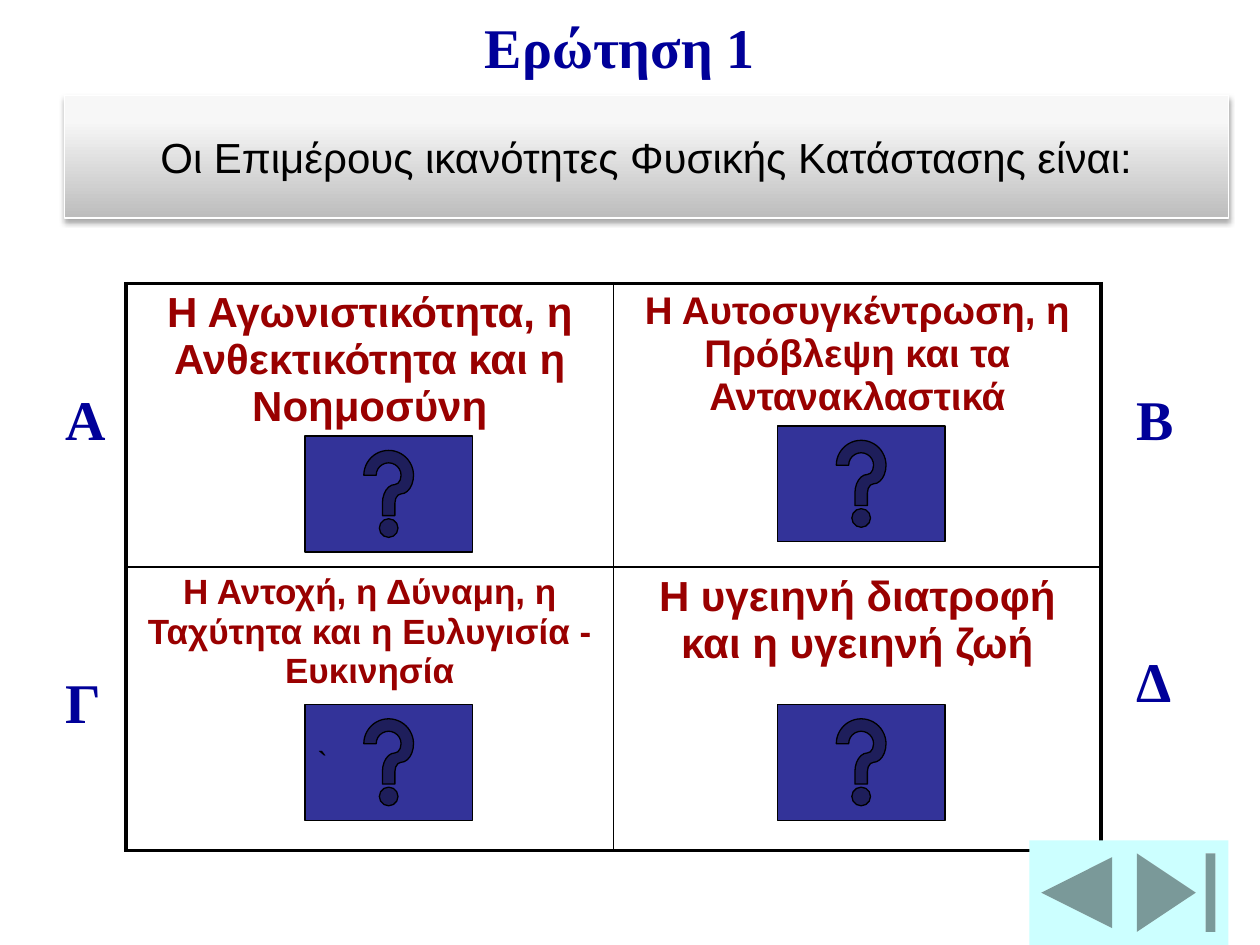
from lxml import etree
from pptx import Presentation
from pptx.dml.color import RGBColor
from pptx.enum.shapes import MSO_SHAPE
from pptx.enum.text import MSO_ANCHOR, PP_ALIGN
from pptx.oxml import parse_xml
from pptx.oxml.ns import qn
from pptx.util import Inches, Pt

NAMESPACE = "http://schemas.openxmlformats.org/drawingml/2006/main"
COLORS = {
    "heading": "000099", "answer": "990000", "ink": "000000", "paper": "FFFFFF",
    "button": "333399", "navigation": "CCFFFF",
    "banner_top": "F7F7F7", "banner_bottom": "BDBDBD",
}

# Content
HEADING = "Ερώτηση 1"
QUESTION = "Οι Επιμέρους ικανότητες Φυσικής Κατάστασης είναι:"
ANSWERS = [
    [("Η Αγωνιστικότητα, η Ανθεκτικότητα και η Νοημοσύνη", 24),
     ("Η Αυτοσυγκέντρωση, η Πρόβλεψη και τα Αντανακλαστικά", 22)],
    [("Η Αντοχή, η Δύναμη, η Ταχύτητα και η Ευλυγισία - Ευκινησία", 20),
     ("Η υγειηνή διατροφή και η υγειηνή ζωή", 24)],
]
LETTERS = [["Α", "Β"], ["Γ", "Δ"]]
BUTTON_TEXTS = [["", ""], ["`", ""]]

# Grid
TABLE_LEFT, TABLE_TOP, COLUMN, ROW = 1, 2.25, 3.87, 2.25
LETTER_LEFTS = [0.42, 8.92]
LETTER_TOPS = [[3, 3], [5.25, 5.08]]
BUTTON_LEFTS = [2.42, 6.17]
BUTTON_TOPS = [[3.46, 3.38], [5.59, 5.59]]
NAVIGATION = [(MSO_SHAPE.ACTION_BUTTON_END, 8.92, 0.83),
              (MSO_SHAPE.ACTION_BUTTON_BACK_OR_PREVIOUS, 8.17, 0.75)]


def color(name):
    return RGBColor.from_string(COLORS[name])


def write(frame, text, size, font, color_name, bold=False, align=PP_ALIGN.LEFT):
    frame.text = text
    paragraph = frame.paragraphs[0]
    paragraph.alignment = align
    for run in paragraph.runs:
        run.font.size = Pt(size)
        run.font.name = font
        run.font.bold = bold
        run.font.color.rgb = color(color_name)


def add_label(slide, text, left, top, width):
    box = slide.shapes.add_textbox(*map(Inches, (left, top, width, 0.63)))
    box.text_frame.word_wrap = True
    write(box.text_frame, text, 32, "Times New Roman", "heading", bold=True)


def add_shape(slide, kind, left, top, width, height, fill, line=None):
    shape = slide.shapes.add_shape(kind, *map(Inches, (left, top, width, height)))
    shape.shadow.inherit = False
    shape.fill.solid()
    shape.fill.fore_color.rgb = color(fill)
    if line:
        shape.line.color.rgb = color(line)
        shape.line.width = Pt(0.75)
    else:
        shape.line.fill.background()
    return shape


def add_banner(slide):
    banner = add_shape(slide, MSO_SHAPE.RECTANGLE, 0.51, 0.76, 9.24, 0.97, "paper", "paper")
    banner.fill.gradient()
    banner.fill.gradient_angle = 270
    stops = zip(banner.fill.gradient_stops, ("banner_top", "banner_bottom"), (0.2, 1))
    for stop, name, position in stops:
        stop.color.rgb = color(name)
        stop.position = position
    effects = banner._element.spPr.find(qn("a:effectLst"))
    effects.append(parse_xml(
        f'<a:outerShdw xmlns:a="{NAMESPACE}" blurRad="40000" dist="23000" dir="5400000" '
        'rotWithShape="0"><a:srgbClr val="000000"><a:alpha val="35000"/></a:srgbClr>'
        '</a:outerShdw>'))
    banner.text_frame.word_wrap = True
    banner.text_frame.vertical_anchor = MSO_ANCHOR.MIDDLE
    write(banner.text_frame, QUESTION, 24, "Arial", "ink", align=PP_ALIGN.CENTER)


def set_borders(cell, widths):
    properties = cell._tc.get_or_add_tcPr()
    for index, (side, width) in enumerate(widths.items()):
        line = etree.Element(qn(f"a:{side}"), w=str(Pt(width)))
        fill = etree.SubElement(line, qn("a:solidFill"))
        etree.SubElement(fill, qn("a:srgbClr"), val=COLORS["ink"])
        properties.insert(index, line)


def add_answers(slide):
    table = slide.shapes.add_table(
        2, 2, *map(Inches, (TABLE_LEFT, TABLE_TOP, 2 * COLUMN, 2 * ROW))).table
    for index in range(2):
        table.columns[index].width = Inches(COLUMN)
        table.rows[index].height = Inches(ROW)
    for row, answers in enumerate(ANSWERS):
        for column, (text, size) in enumerate(answers):
            cell = table.cell(row, column)
            cell.fill.solid()
            cell.fill.fore_color.rgb = color("paper")
            write(cell.text_frame, text, size, "Arial", "answer", True, PP_ALIGN.CENTER)
            # Thick outside, thin inside
            set_borders(cell, {
                "lnL": 1 if column else 2.25, "lnR": 2.25 if column else 1,
                "lnT": 1 if row else 2.25, "lnB": 2.25 if row else 1})


def main():
    presentation = Presentation()
    presentation.slide_width, presentation.slide_height = Inches(10), Inches(7.5)
    slide = presentation.slides.add_slide(presentation.slide_layouts[6])

    # Question and answers
    add_banner(slide)
    add_answers(slide)
    add_label(slide, HEADING, 3.75, 0.05, 2.67)

    # Letter and help button of each answer
    for row in range(2):
        for column in range(2):
            add_label(slide, LETTERS[row][column], LETTER_LEFTS[column],
                      LETTER_TOPS[row][column], 0.5)
            button = add_shape(slide, MSO_SHAPE.ACTION_BUTTON_HELP, BUTTON_LEFTS[column],
                               BUTTON_TOPS[row][column], 1.33, 0.92, "button", "ink")
            if BUTTON_TEXTS[row][column]:
                button.text_frame.word_wrap = False
                button.text_frame.vertical_anchor = MSO_ANCHOR.MIDDLE
                write(button.text_frame, BUTTON_TEXTS[row][column], 18, "Arial", "ink")

    # Navigation
    for kind, left, width in NAVIGATION:
        add_shape(slide, kind, left, 6.67, width, 0.83, "navigation")

    presentation.save("out.pptx")


if __name__ == "__main__":
    main()
